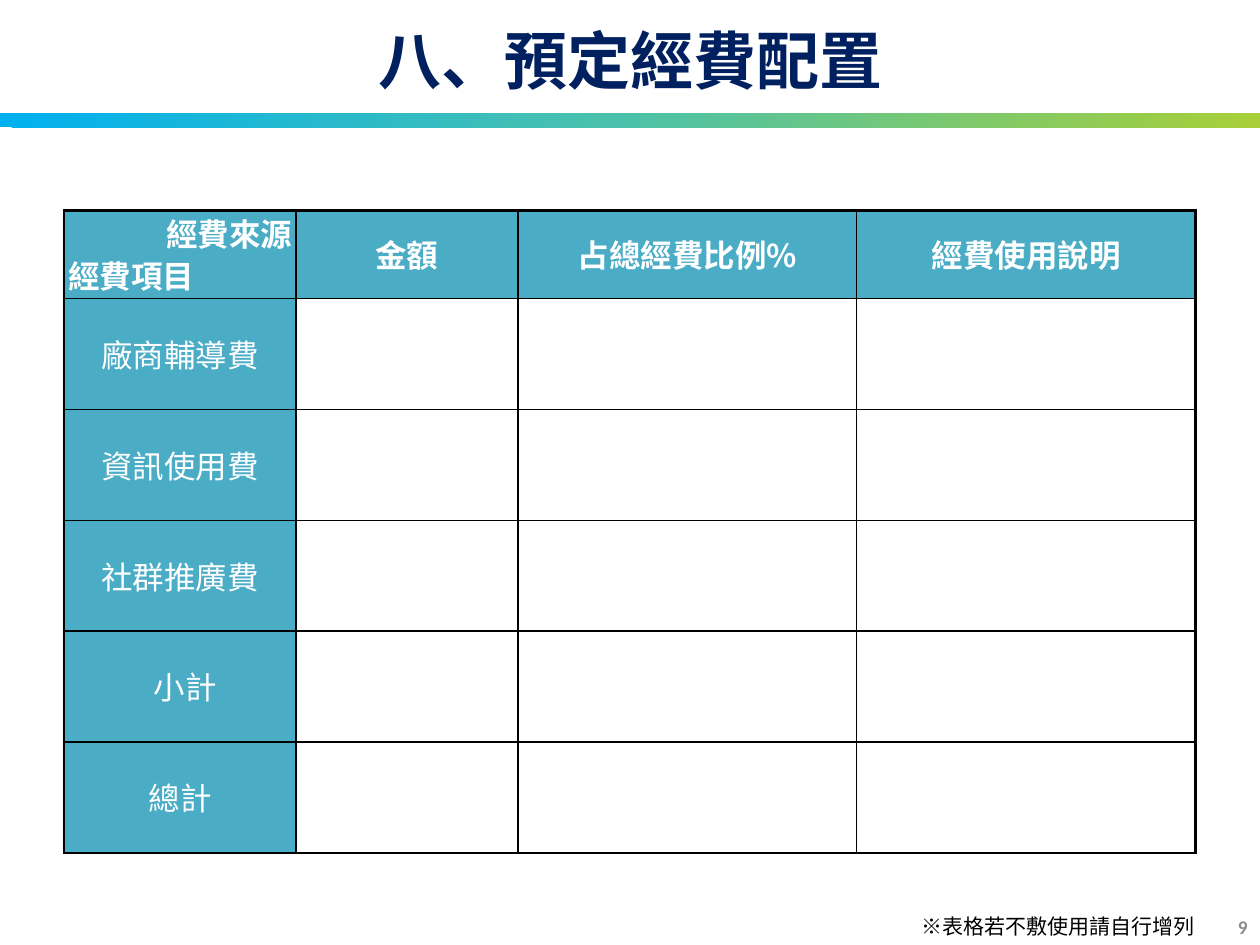
from lxml import etree
from pptx import Presentation
from pptx.dml.color import RGBColor
from pptx.enum import shapes, text
from pptx.oxml import parse_xml
from pptx.oxml.ns import nsdecls, qn
from pptx.util import Inches, Pt

NAVY = RGBColor(0x00, 0x20, 0x60)
TEAL = RGBColor(0x4B, 0xAC, 0xC6)
WHITE = RGBColor(0xFF, 0xFF, 0xFF)
BLACK = RGBColor(0x00, 0x00, 0x00)
GREY = RGBColor(0x8C, 0x8C, 0x8C)
STOPS = [(0, RGBColor(0x00, 0xB0, 0xF0)),
         (48, RGBColor(0x49, 0xC1, 0xAD)),
         (100, RGBColor(0xA8, 0xCF, 0x38))]
CJK = "Noto Sans CJK SC"
ALIGN = text.PP_ALIGN
MIDDLE = text.MSO_ANCHOR.MIDDLE


def write(para, words, align, size, color, bold=False, face=CJK):
    para.alignment = align
    run = para.add_run()
    run.text = words
    style = {"size": Pt(size), "bold": bold, "name": face}
    for key, value in style.items():
        setattr(run.font, key, value)
    run.font.color.rgb = color
    east = etree.SubElement(run._r.get_or_add_rPr(), qn("a:ea"))
    east.set("typeface", face)


def edge(cell, side, width):
    """Draw one border of a cell; side is L, R, T or B."""
    cell._tc.get_or_add_tcPr().append(parse_xml(
        f'<a:ln{side} {nsdecls("a")} w="{Pt(width)}"><a:solidFill>'
        f'<a:srgbClr val="{BLACK}"/></a:solidFill></a:ln{side}>'))


deck = Presentation()
deck.slide_width, deck.slide_height = Inches(10), Inches(7.5)
slide = deck.slides.add_slide(deck.slide_layouts[5])

# Gradient band under the title
band = slide.shapes.add_shape(shapes.MSO_SHAPE.RECTANGLE, Inches(0),
                              Inches(0.9), Inches(10), Inches(0.11))
band.shadow.inherit = False
band.line.fill.background()
stops = "".join(f'<a:gs pos="{pos * 1000}"><a:srgbClr val="{color}"/></a:gs>'
                for pos, color in STOPS)
band._element.spPr.find(qn("a:prstGeom")).addnext(parse_xml(
    f'<a:gradFill {nsdecls("a")} rotWithShape="1"><a:gsLst>{stops}</a:gsLst>'
    f'<a:lin ang="{18 * 60000}" scaled="0"/></a:gradFill>'))

# Title
title = slide.shapes.title
place = {"left": 0, "top": 0, "width": 10, "height": 0.94}
for key, value in place.items():
    setattr(title, key, Inches(value))
title.text_frame.vertical_anchor = MIDDLE
write(title.text_frame.paragraphs[0], "八、預定經費配置", ALIGN.CENTER,
      36, NAVY, True)

# Budget table
heads = ["經費來源\n經費項目", "金額", "占總經費比例%", "經費使用說明"]
items = ["廠商輔導費", "資訊使用費", "社群推廣費", "小計", "總計"]
wide = [1.84, 1.76, 2.69, 2.69]
high = [0.7] + [0.88] * len(items)
table = slide.shapes.add_table(len(high), len(wide), Inches(0.51),
                               Inches(1.67), Inches(sum(wide)),
                               Inches(sum(high))).table
for col, width in zip(table.columns, wide):
    col.width = Inches(width)
for row, height in zip(table.rows, high):
    row.height = Inches(height)

inset = {"margin_left": 0.03, "margin_top": 0.02,
         "margin_right": 0.03, "margin_bottom": 0}
for r in range(len(high)):
    for c in range(len(wide)):
        cell = table.cell(r, c)
        outer = {"L": c == 0, "R": c == len(wide) - 1,
                 "T": r == 0, "B": r == len(high) - 1}
        for side, thick in outer.items():
            edge(cell, side, 1.5 if thick else 1)
        if r and c:
            cell.fill.background()
            continue
        cell.fill.solid()
        cell.fill.fore_color.rgb = TEAL
        cell.vertical_anchor = MIDDLE
        for key, value in inset.items():
            setattr(cell, key, Inches(value))
        lines = (heads[c] if r == 0 else items[r - 1]).split("\n")
        sides = [ALIGN.CENTER] if len(lines) == 1 else [ALIGN.RIGHT,
                                                        ALIGN.JUSTIFY]
        frame = cell.text_frame
        for i, (line, align) in enumerate(zip(lines, sides)):
            para = frame.add_paragraph() if i else frame.paragraphs[0]
            para.line_spacing = Pt(24)
            write(para, line, align, 18, WHITE, r == 0)
            if line == "小計":
                para._p.get_or_add_pPr().set("marL", str(Inches(0.08)))

# Page number and footnote
page = slide.shapes.add_textbox(Inches(7.67), Inches(7.16),
                                Inches(2.33), Inches(0.4)).text_frame
page.word_wrap = True
page.vertical_anchor = MIDDLE
page.paragraphs[0].space_after = Pt(6)
write(page.paragraphs[0], "9", ALIGN.RIGHT, 11, GREY, True, "Calibri")

note = slide.shapes.add_textbox(Inches(7.14), Inches(7.2),
                                Inches(2.52), Inches(0.3)).text_frame
note.word_wrap = True
note.auto_size = text.MSO_AUTO_SIZE.SHAPE_TO_FIT_TEXT
write(note.paragraphs[0], "※表格若不敷使用請自行增列", ALIGN.CENTER, 12, BLACK)

deck.save("out.pptx")
